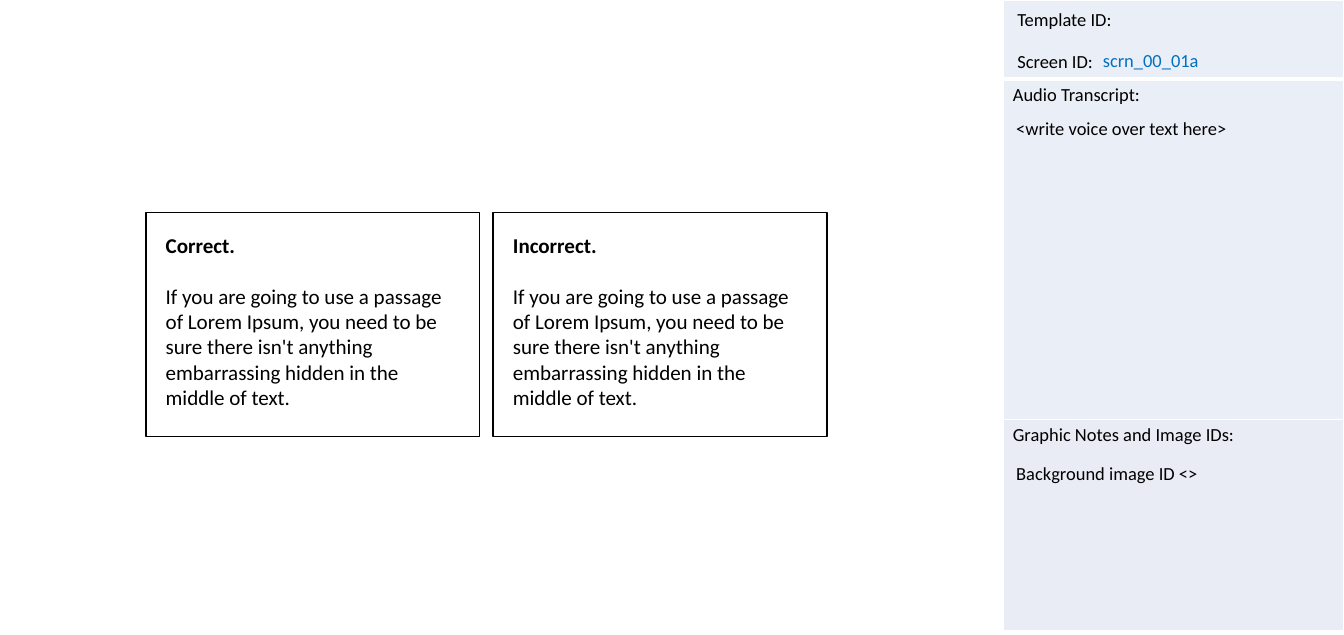
"""Build a storyboard slide with two feedback cards and a notes sidebar."""
from dataclasses import dataclass

from lxml import etree
from pptx import Presentation
from pptx.dml.color import RGBColor
from pptx.enum.shapes import MSO_SHAPE as Preset
from pptx.enum.text import MSO_ANCHOR as Anchor, PP_ALIGN as Align
from pptx.oxml.ns import qn
from pptx.util import Cm, Pt


@dataclass(frozen=True)
class Theme:
    font: str = "Calibri"
    black: RGBColor = RGBColor(0, 0, 0)
    white: RGBColor = RGBColor(255, 255, 255)
    blue: RGBColor = RGBColor(0x00, 0x70, 0xC0)
    panel: RGBColor = RGBColor(0xEA, 0xEF, 0xF7)
    panel_dark: RGBColor = RGBColor(0xE9, 0xEB, 0xF5)
    note_size: Pt = Pt(14)
    card_size: Pt = Pt(16)
    card_gap: Pt = Pt(19.5)


theme = Theme()


def write(para, text, size, color=theme.black, bold=False):
    para.text = text
    para.alignment = Align.LEFT
    para.font.name = theme.font
    para.font.size = size
    para.font.bold = bold
    para.font.color.rgb = color


def add_border(cell, side, position, width):
    line = etree.Element(qn(f"a:ln{side}"), w=str(width))
    fill = etree.SubElement(line, qn("a:solidFill"))
    etree.SubElement(fill, qn("a:srgbClr"), val=str(theme.white))
    cell._tc.get_or_add_tcPr().insert(position, line)


deck = Presentation()
deck.slide_width, deck.slide_height = Cm(36), Cm(17)
page = deck.slides.add_slide(deck.slide_layouts[6])

panels = [
    ("", 2.11, theme.panel),
    ("Audio Transcript:", 9.12, theme.panel),
    ("Graphic Notes and Image IDs:", 5.66, theme.panel_dark),
]
sidebar = page.shapes.add_table(
    len(panels), 1, Cm(26.88), Cm(0), Cm(9.12), Cm(16.89)
).table
sidebar.first_row = sidebar.horz_banding = False
for index, (heading, height, color) in enumerate(panels):
    sidebar.rows[index].height = Cm(height)
    cell = sidebar.cell(index, 0)
    cell.margin_left = cell.margin_right = Cm(0.25)
    cell.fill.solid()
    cell.fill.fore_color.rgb = color
    write(cell.text_frame.paragraphs[0], heading, theme.note_size)
    top_width = Pt(3) if index == 1 else Pt(1)
    bottom_width = Pt(3) if index == 0 else Pt(1)
    widths = {"L": Pt(1), "R": Pt(1), "T": top_width, "B": bottom_width}
    for position, (side, width) in enumerate(widths.items()):
        add_border(cell, side, position, width)

notes = [
    ("Screen ID:", 27, 1.22, 9, theme.black),
    ("Template ID:", 27, 0.1, 9, theme.black),
    ("<write voice over text here>", 26.97, 3.02, 9.03, theme.black),
    ("Background image ID <>", 26.97, 12.24, 9.03, theme.black),
    ("scrn_00_01a", 29.29, 1.2, 3.91, theme.blue),
]
for text, left, top, width, color in notes:
    box = page.shapes.add_textbox(Cm(left), Cm(top), Cm(width), Cm(0.86))
    box.text_frame.word_wrap = True
    write(box.text_frame.paragraphs[0], text, theme.note_size, color)

feedback = (
    "If you are going to use a passage of Lorem Ipsum, you need to be sure "
    "there isn't anything embarrassing hidden in the middle of text."
)
for index, verdict in enumerate(["Correct.", "Incorrect."]):
    card = page.shapes.add_shape(
        Preset.RECTANGLE, Cm(3.91 + 9.3 * index), Cm(5.69), Cm(8.94), Cm(5.99)
    )
    card.shadow.inherit = False
    card.fill.solid()
    card.fill.fore_color.rgb = theme.white
    card.line.color.rgb = theme.black
    card.line.width = Pt(1)
    frame = card.text_frame
    frame.word_wrap = True
    frame.vertical_anchor = Anchor.TOP
    frame.margin_left = frame.margin_right = Cm(0.53)
    frame.margin_top = frame.margin_bottom = Cm(0.53)
    title = frame.paragraphs[0]
    write(title, verdict, theme.card_size, bold=True)
    title.space_after = theme.card_gap
    write(frame.add_paragraph(), feedback, theme.card_size)

deck.save("out.pptx")
